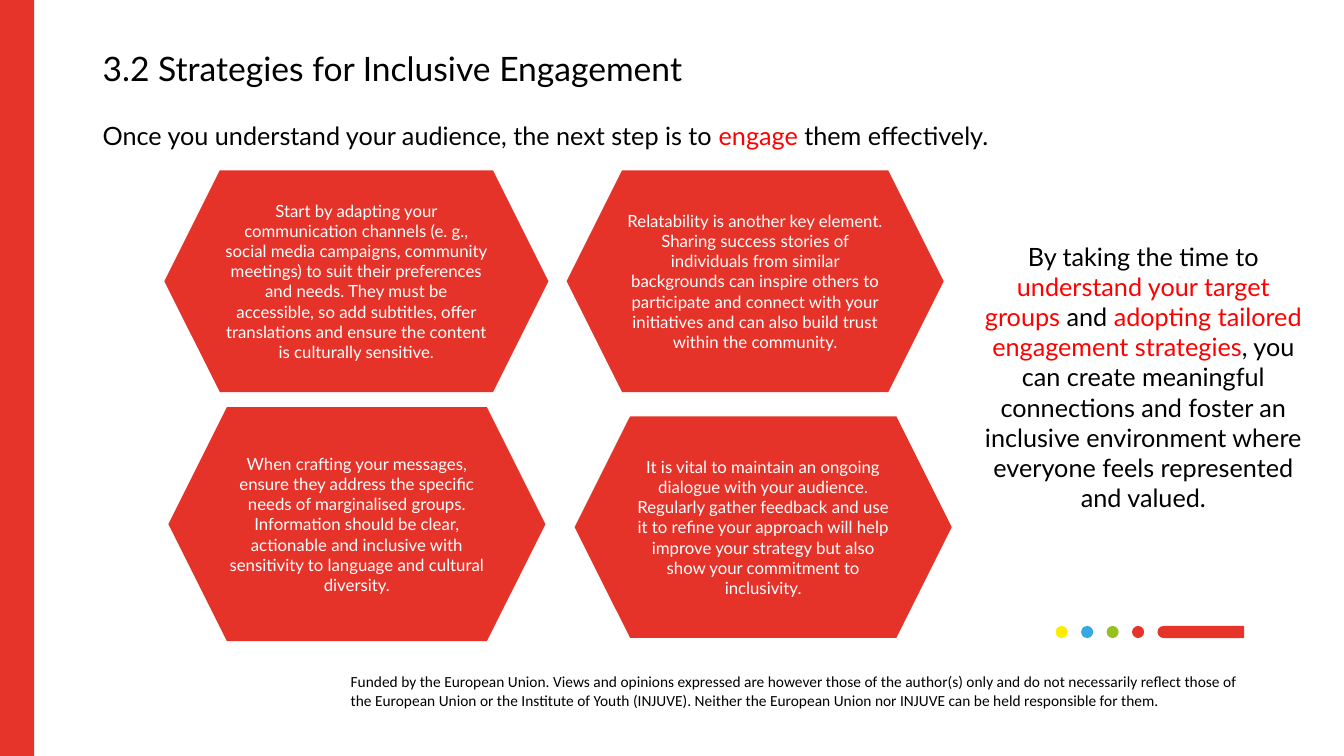
from pptx import Presentation
from pptx.dml.color import RGBColor
from pptx.enum import shapes, text
from pptx.util import Inches, Pt

RED = "E6342A"
HEXAGON_RED = "E6332A"
HIGHLIGHT = "FF0000"
BLACK = "000000"
WHITE = "FFFFFF"

presentation = Presentation()
presentation.slide_width = Inches(13.33)
presentation.slide_height = Inches(7.5)
slide = presentation.slides.add_slide(presentation.slide_layouts[6])


def add_filled(kind, box, color):
    shape = slide.shapes.add_shape(kind, *map(Inches, box))
    shape.shadow.inherit = False
    shape.fill.solid()
    shape.fill.fore_color.rgb = RGBColor.from_string(color)
    shape.line.fill.background()
    return shape


def write(shape, runs, size, font="Lato", align=text.PP_ALIGN.LEFT,
          anchor=text.MSO_ANCHOR.TOP):
    """Fill the shape with one paragraph made of (words, color) runs."""
    frame = shape.text_frame
    frame.word_wrap = True
    frame.vertical_anchor = anchor
    paragraph = frame.paragraphs[0]
    paragraph.alignment = align
    paragraph.font.size = Pt(size)
    paragraph.font.name = font
    for words, color in runs:
        run = paragraph.add_run()
        run.text = words
        run.font.color.rgb = RGBColor.from_string(color)


# Side band, and the row of dots ending in a rounded bar
RECTANGLE = shapes.MSO_SHAPE.RECTANGLE
add_filled(RECTANGLE, (0, 0, 0.34, 7.5), RED)
add_filled(RECTANGLE, (11.55, 6.21, 0.79, 0.12), RED)
for index, color in enumerate(["FEED00", "36A9E0", "94C11E", RED, RED]):
    left = 10.47 + index * 0.2525
    add_filled(shapes.MSO_SHAPE.OVAL, (left, 6.21, 0.12, 0.12), color)

# Strategies
strategies = [
    ((1.63, 1.69, 3.81, 2.2),
     "Start by adapting your communication channels (e. g., social media "
     "campaigns, community meetings) to suit their preferences and needs. "
     "They must be accessible, so add subtitles, offer translations and "
     "ensure the content is culturally sensitive."),
    ((5.62, 1.69, 3.74, 2.2),
     "Relatability is another key element. Sharing success stories of "
     "individuals from similar backgrounds can inspire others to participate "
     "and connect with your initiatives and can also build trust within the "
     "community."),
    ((1.67, 4.04, 3.74, 2.32),
     "When crafting your messages, ensure they address the specific needs of "
     "marginalised groups. Information should be clear, actionable and "
     "inclusive with sensitivity to language and cultural diversity."),
    ((5.7, 4.13, 3.74, 2.2),
     "It is vital to maintain an ongoing dialogue with your audience. "
     "Regularly gather feedback and use it to refine your approach will help "
     "improve your strategy but also show your commitment to inclusivity."),
]
for box, words in strategies:
    hexagon = add_filled(shapes.MSO_SHAPE.HEXAGON, box, HEXAGON_RED)
    write(hexagon, [(words, WHITE)], 12, align=text.PP_ALIGN.CENTER,
          anchor=text.MSO_ANCHOR.MIDDLE)

# Title, lead sentence, conclusion and funding note
LEFT, CENTER = text.PP_ALIGN.LEFT, text.PP_ALIGN.CENTER
text_boxes = [
    ((0.92, 0.43, 8.52, 0.71), 24, "Lato", LEFT,
     [("3.2 Strategies for Inclusive Engagement", BLACK)]),
    ((0.92, 1.14, 9.4, 0.4), 18, "Lato", LEFT,
     [("Once you understand your audience, the next step is to ", BLACK),
      ("engage", HIGHLIGHT),
      (" them effectively.", BLACK)]),
    ((9.65, 2.34, 3.38, 2.83), 18, "Lato", CENTER,
     [("By taking the time to ", BLACK),
      ("understand your target groups ", HIGHLIGHT),
      ("and ", BLACK),
      ("adopting tailored engagement strategies", HIGHLIGHT),
      (", you can create meaningful connections and foster an inclusive "
       "environment where everyone feels represented and valued.", BLACK)]),
    ((3.38, 6.62, 9.03, 0.47), 11, "Calibri", LEFT,
     [("Funded by the European Union. Views and opinions expressed are "
       "however those of the author(s) only and do not necessarily reflect "
       "those of the European Union or the Institute of Youth (INJUVE). "
       "Neither the European Union nor INJUVE can be held responsible for "
       "them.", BLACK)]),
]
for box, size, font, align, runs in text_boxes:
    write(slide.shapes.add_textbox(*map(Inches, box)), runs, size, font, align)

presentation.save("out.pptx")
